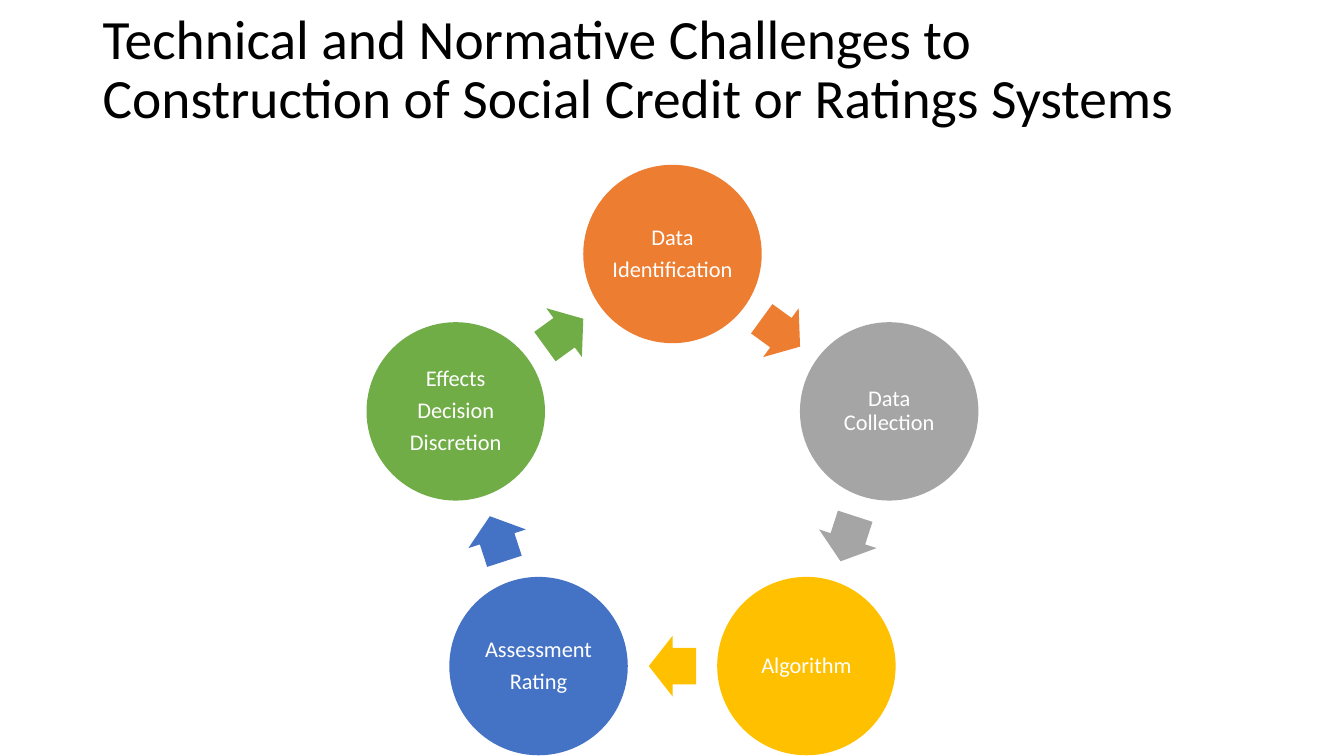
from math import cos, radians, sin

from pptx import Presentation
from pptx.dml.color import RGBColor
from pptx.enum.shapes import MSO_SHAPE as Shape
from pptx.enum.text import MSO_ANCHOR as Anchor, PP_ALIGN as Align
from pptx.util import Inches, Pt


def rgb(hex_color):
    return RGBColor.from_string(hex_color)


def add_solid(kind, center_x, center_y, width, height, color):
    solid = slide.shapes.add_shape(
        kind, Inches(center_x - width / 2), Inches(center_y - height / 2),
        Inches(width), Inches(height))
    solid.shadow.inherit = False
    solid.fill.solid()
    solid.fill.fore_color.rgb = rgb(color)
    solid.line.fill.background()
    return solid


prs = Presentation()
prs.slide_width, prs.slide_height = Inches(13.33), Inches(7.5)
slide = prs.slides.add_slide(prs.slide_layouts[6])

# Title
title = slide.shapes.add_textbox(Inches(0.92), 0, Inches(11.5), Inches(1.41))
title_frame = title.text_frame
title_frame.word_wrap = True
title_frame.vertical_anchor = Anchor.MIDDLE
title_frame.text = ("Technical and Normative Challenges to Construction "
                    "of Social Credit or Ratings Systems")
heading = title_frame.paragraphs[0]
heading.line_spacing = 0.9
heading.font.name = "Calibri"
heading.font.size = Pt(39.6)
heading.font.color.rgb = rgb("000000")

# Cycle of stages, clockwise from the top
stages = [
    ("Data\nIdentification", "ED7D31"),
    ("Data Collection", "A5A5A5"),
    ("Algorithm", "FFC000"),
    ("Assessment\nRating", "4472C4"),
    ("Effects\nDecision\nDiscretion", "70AD47"),
]
CYCLE_X, CYCLE_Y, RADIUS = 6.67, 4.78, 2.26
STEP = 360 / len(stages)
ARROW_RADIUS = RADIUS * cos(radians(STEP / 2))

for index, (label, color) in enumerate(stages):
    # Stage circle
    angle = radians(index * STEP)
    stage = add_solid(Shape.OVAL, CYCLE_X + RADIUS * sin(angle),
                      CYCLE_Y - RADIUS * cos(angle), 1.77, 1.77, color)
    frame = stage.text_frame
    frame.word_wrap = True
    frame.vertical_anchor = Anchor.MIDDLE
    frame.margin_left = frame.margin_right = Inches(0.02)
    frame.margin_top = frame.margin_bottom = Inches(0.02)
    frame.text = label
    for line in frame.paragraphs:
        line.alignment = Align.CENTER
        line.line_spacing = 0.9
        line.space_after = Pt(5.6)
        line.font.name = "Calibri"
        line.font.size = Pt(16)
        line.font.color.rgb = rgb("FFFFFF")

    # Arrow halfway to the next stage
    turn = (index + 0.5) * STEP
    arrow = add_solid(Shape.RIGHT_ARROW,
                      CYCLE_X + ARROW_RADIUS * sin(radians(turn)),
                      CYCLE_Y - ARROW_RADIUS * cos(radians(turn)),
                      0.47, 0.6, color)
    arrow.adjustments[0] = 0.6
    arrow.adjustments[1] = 0.5
    arrow.rotation = turn

prs.save("out.pptx")
